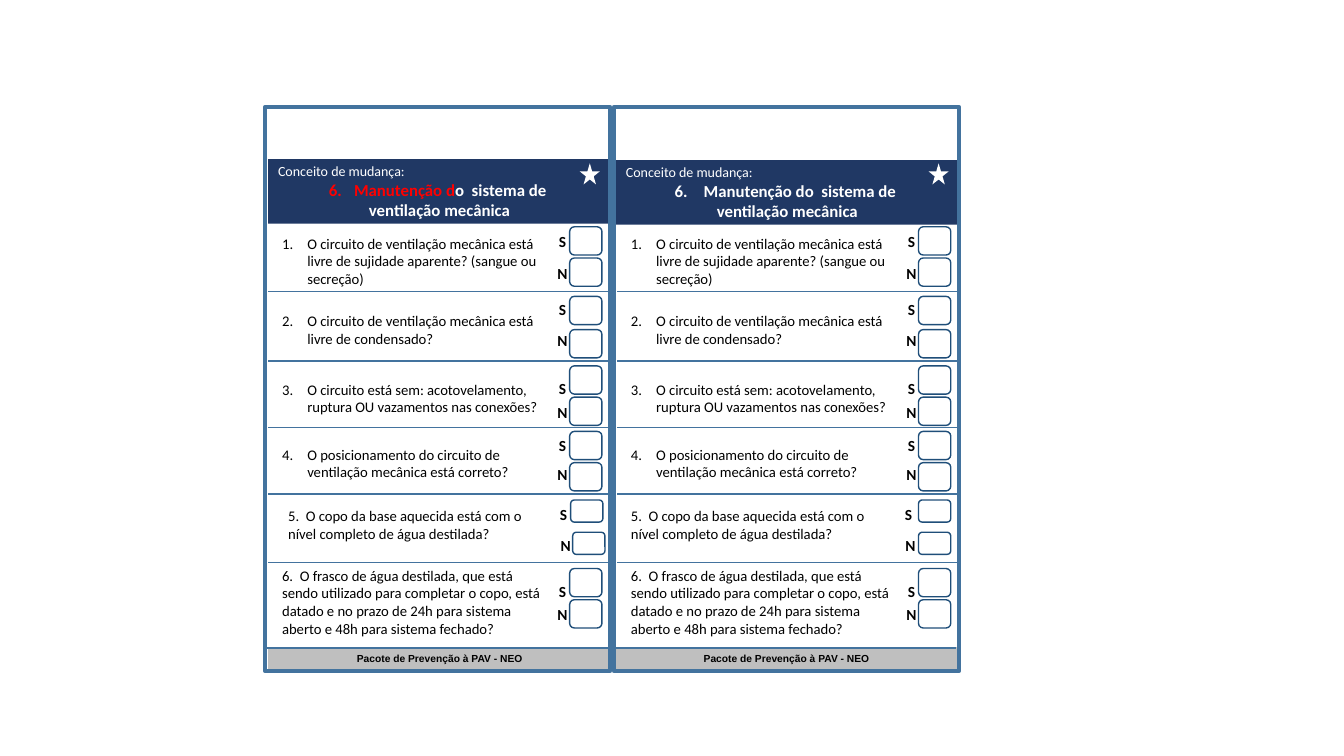
"""Build a slide with two side-by-side ventilation checklist cards."""
from lxml.etree import SubElement
from pptx import Presentation
from pptx.dml.color import RGBColor
from pptx.enum.shapes import MSO_CONNECTOR, MSO_SHAPE
from pptx.enum.text import MSO_ANCHOR, PP_ALIGN
from pptx.oxml.ns import qn
from pptx.util import Inches, Pt

COLORS = {"navy": "203864", "frame": "43739E", "box": "1F4E79", "footer": "BFBFBF",
          "white": "FFFFFF", "black": "000000", "red": "FF0000"}
FORMATS = {
    "concept": {"name": "Calibri", "size": Pt(10)},
    "heading": {"name": "Calibri", "size": Pt(12), "bold": True},
    "question": {"name": "Calibri", "size": Pt(10.5)},
    "answer": {"name": "Calibri", "size": Pt(11), "bold": True},
    "footer": {"name": "Arial", "size": Pt(7.3), "bold": True},
}
NO_NUDGE = (0, 0, 0, 0, 0)
CARDS = [
    {"left": 2.63, "header": 2.66, "header_top": 1.58, "footer": 2.66, "last_line": 2.63,
     "heading": [("Manutenção d", "red"), ("o  sistema de ", "white")],
     "nudge": (0.06, 0.01, 0.03, 0.01, 0.03)},
    {"left": 6.09, "header": 6.11, "header_top": 1.59, "footer": 6.1, "last_line": 6.04,
     "heading": [(" Manutenção do  sistema de ", "white")],
     "nudge": (0, 0, 0, -0.03, -0.01)},
]
ROWS = [
    (1, "O circuito de ventilação mecânica está livre de sujidade aparente? (sangue ou secreção)",
     (2.28, 0.62), (2.25, 2.56), 0.28, (2.39, 2.71), 2.89),
    (2, "O circuito de ventilação mecânica está livre de condensado?",
     (2.96, 0.62), (2.94, 3.27), 0.28, (3.07, 3.38), 3.58),
    (3, "O circuito está sem: acotovelamento, ruptura OU vazamentos nas conexões?",
     (3.64, 0.62), (3.63, 3.94), 0.28, (3.85, 4.09), 4.24),
    (4, "O posicionamento do circuito de ventilação mecânica está correto?",
     (4.35, 0.49), (4.28, 4.59), 0.28, (4.42, 4.71), 4.9),
    (None, "5.  O copo da base aquecida está com o nível completo de água destilada?",
     (5.03, 0.35), (4.96, 5.28), 0.22, (5.1, 5.41), 5.58),
    (None, "6.  O frasco de água destilada, que está sendo utilizado para completar o copo, está "
     "datado e no prazo de 24h para sistema aberto e 48h para sistema fechado?",
     (5.76, 0.42), (5.64, 5.95), 0.28, (5.87, 6.1), None),
]


class Checklist:
    """Hold the style and the current slide, and draw each kind of element."""

    def __init__(self, slide):
        self.slide = slide

    def color(self, name):
        return RGBColor.from_string(COLORS[name])

    def shape(self, kind, left, top, width, height, fill=None, line=None, weight=1):
        element = self.slide.shapes.add_shape(
            kind, Inches(left), Inches(top), Inches(width), Inches(height))
        element.shadow.inherit = False
        if fill:
            element.fill.solid()
            element.fill.fore_color.rgb = self.color(fill)
        else:
            element.fill.background()
        if line:
            element.line.color.rgb = self.color(line)
            element.line.width = Pt(weight)
        else:
            element.line.fill.background()
        return element

    def textbox(self, left, top, width, height, margin=0.1):
        frame = self.slide.shapes.add_textbox(
            Inches(left), Inches(top), Inches(width), Inches(height)).text_frame
        frame.word_wrap = True
        frame.vertical_anchor = MSO_ANCHOR.MIDDLE
        frame.margin_left = frame.margin_right = Inches(margin)
        return frame

    def add_text(self, paragraph, runs, style, align=PP_ALIGN.LEFT, number=None):
        paragraph.alignment = align
        for text, color in runs:
            run = paragraph.add_run()
            run.text = text
            run.font.color.rgb = self.color(color)
            for attribute, value in FORMATS[style].items():
                setattr(run.font, attribute, value)
        if number:
            properties = paragraph._p.get_or_add_pPr()
            properties.set("marL", str(Inches(0.25)))
            properties.set("indent", str(-Inches(0.25)))
            SubElement(properties, qn("a:buFont"), typeface="+mj-lt")
            SubElement(properties, qn("a:buAutoNum"), type="arabicPeriod", startAt=str(number))

    def divider(self, left, top, width):
        line = self.slide.shapes.add_connector(
            MSO_CONNECTOR.STRAIGHT, Inches(left), Inches(top), Inches(left + width), Inches(top))
        line.line.color.rgb = self.color("frame")
        line.line.width = Pt(1)
        SubElement(line._element.spPr, qn("a:effectLst"))

    def header(self, card):
        frame = self.shape(MSO_SHAPE.RECTANGLE, card["header"], card["header_top"],
                           3.4, 0.64, "navy").text_frame
        self.add_text(frame.paragraphs[0], [("Conceito de mudança:", "white")], "concept")
        self.add_text(frame.add_paragraph(), card["heading"], "heading", PP_ALIGN.CENTER, 6)
        self.add_text(frame.add_paragraph(), [("ventilação mecânica", "white")],
                      "heading", PP_ALIGN.CENTER)
        self.shape(MSO_SHAPE.STAR_5_POINT, card["left"] + 3.12, 1.62, 0.2, 0.21, "white")

    def footer(self, card):
        frame = self.shape(MSO_SHAPE.RECTANGLE, card["footer"], 6.42, 3.4, 0.22,
                           "footer").text_frame
        self.add_text(frame.paragraphs[0], [("Pacote de Prevenção à PAV - NEO", "black")],
                      "footer", PP_ALIGN.CENTER)
        self.divider(card["last_line"], 6.43, 3.44)

    def row(self, left, row, nudge):
        number, question, (top, height), box_tops, box_height, centres, divider = row
        frame = self.textbox(left + 0.07 + nudge[0], top, 2.8, height)
        self.add_text(frame.paragraphs[0], [(question, "black")], "question", number=number)
        for box_top, shift in zip(box_tops, nudge[1:3]):
            self.shape(MSO_SHAPE.ROUNDED_RECTANGLE, left + 3.02 + shift, box_top,
                       0.32, box_height, line="box")
        for answer, centre, shift in zip("SN", centres, nudge[3:]):
            label = self.textbox(left + 2.83 + shift, centre - 0.1, 0.24, 0.2, margin=0)
            self.add_text(label.paragraphs[0], [(answer, "black")], "answer", PP_ALIGN.CENTER)
        if divider:
            self.divider(left + 0.03, divider, 3.39)

    def card(self, card):
        self.header(card)
        self.footer(card)
        for position, row in enumerate(ROWS, 1):
            self.row(card["left"], row, card["nudge"] if position == 5 else NO_NUDGE)
        self.shape(MSO_SHAPE.RECTANGLE, card["left"], 1.06, 3.42, 5.6, line="frame", weight=3)


def main():
    deck = Presentation()
    deck.slide_width, deck.slide_height = Inches(13.33), Inches(7.5)
    checklist = Checklist(deck.slides.add_slide(deck.slide_layouts[6]))
    for card in CARDS:
        checklist.card(card)
    deck.save("out.pptx")


if __name__ == "__main__":
    main()
